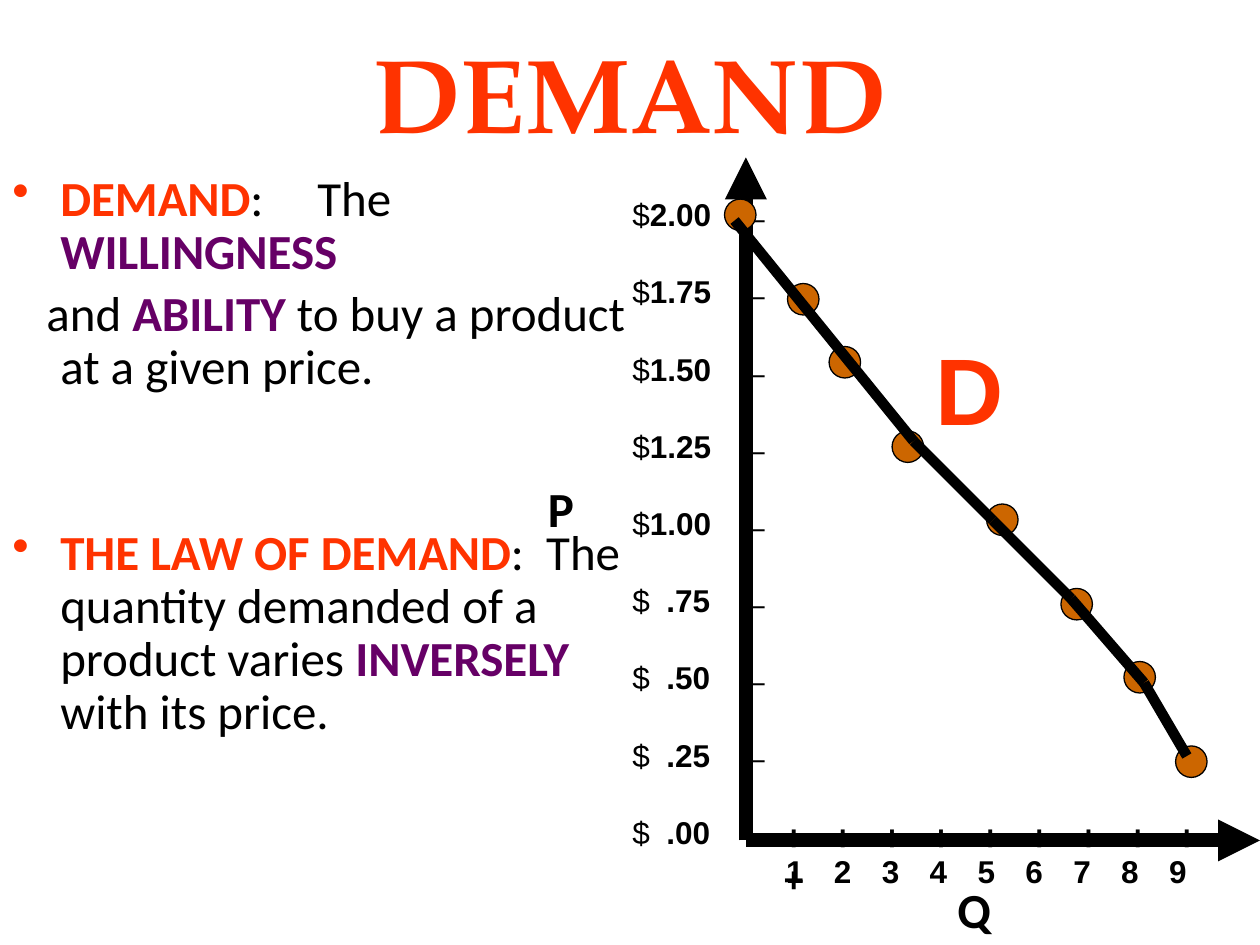
from itertools import pairwise

from lxml import etree
from pptx import Presentation
from pptx.dml.color import RGBColor
from pptx.enum.shapes import MSO_CONNECTOR as CONN, MSO_SHAPE as SHAPE
from pptx.enum.text import MSO_ANCHOR as ANCHOR, MSO_AUTO_SIZE as AUTO, PP_ALIGN as ALIGN
from pptx.oxml.ns import qn
from pptx.util import Inches, Pt

RED = RGBColor(0xFF, 0x33, 0x00)
PURPLE = RGBColor(0x66, 0x00, 0x66)
BLACK = RGBColor(0, 0, 0)
OCHRE = RGBColor(0xCC, 0x66, 0x00)

PRICES = ["2.00", "1.75", "1.50", "1.25", "1.00", ".75", ".50", ".25", ".00"]
LABEL_GAP = 22.5
DOT_SIZE = 0.25
# Offsets in inches from the top left corner of the graph
DOTS = [(1.5, 0.33), (2, 1), (2.33, 1.5), (2.83, 2.17),
        (3.58, 2.75), (4.17, 3.42), (4.67, 4), (5.08, 4.67)]
CURVE = [(1.58, 0.5), (3, 2.25), (3.63, 2.88), (4.25, 3.5), (4.83, 4.17), (5.17, 4.75)]


def add_run(p, text, size, font, color=BLACK, bold=False):
    r = p.add_run()
    r.text = text
    r.font.size, r.font.name, r.font.bold = Pt(size), font, bold
    r.font.color.rgb = color


def add_text_frame(slide, left, top, width, height):
    tf = slide.shapes.add_textbox(
        Inches(left), Inches(top), Inches(width), Inches(height)).text_frame
    tf.word_wrap = True
    return tf


def next_paragraph(tf, gap=0):
    """Return the empty first paragraph, or a new one with the gap above it."""
    if not tf.paragraphs[0].runs:
        return tf.paragraphs[0]
    p = tf.add_paragraph()
    p.space_before = Pt(gap)
    return p


def add_tabs(p, stops):
    tabs = etree.SubElement(p._p.get_or_add_pPr(), qn("a:tabLst"))
    for stop in stops:
        etree.SubElement(tabs, qn("a:tab"), pos=str(Inches(stop)), algn="l")


def add_bullet(p, color):
    pPr = p._p.get_or_add_pPr()
    clr = etree.SubElement(pPr, qn("a:buClr"))
    etree.SubElement(clr, qn("a:srgbClr"), val=str(color))
    etree.SubElement(pPr, qn("a:buChar"), char="•")


def add_line(slide, start, end, width, arrow=False):
    ends = [Inches(v) for v in (*start, *end)]
    line = slide.shapes.add_connector(CONN.STRAIGHT, *ends)
    line.line.color.rgb = BLACK
    line.line.width = Pt(width)
    if arrow:
        etree.SubElement(line.line._get_or_add_ln(), qn("a:tailEnd"), type="triangle")
    etree.SubElement(line._element.spPr, qn("a:effectLst"))


def add_title(slide, left, top, width, height):
    sp = slide.shapes.title
    sp.left, sp.top = Inches(left), Inches(top)
    sp.width, sp.height = Inches(width), Inches(height)
    tf = sp.text_frame
    tf.auto_size, tf.vertical_anchor = AUTO.NONE, ANCHOR.MIDDLE
    p = tf.paragraphs[0]
    p.alignment, p.line_spacing = ALIGN.CENTER, Pt(57)
    add_run(p, "DEMAND", 60, "TeX Gyre Pagella", RED, True)


def add_definitions(slide, left, top, width, height):
    tf = add_text_frame(slide, left, top, width, height)
    # Each paragraph: gap above, first-line indent, bulleted, tab stops, runs
    paragraphs = [
        (0, -0.38, True, [2.42],
         [("DEMAND", RED), (":\tThe ", BLACK), ("WILLINGNESS", PURPLE)]),
        (5.6, -0.11, False, [],
         [("and ", BLACK), ("ABILITY", PURPLE),
          (" to buy a product at a given price.", BLACK)]),
        (76, -0.38, True, [],
         [("THE LAW OF DEMAND", RED),
          (":  The quantity demanded of a product varies ", BLACK),
          ("INVERSELY", PURPLE), (" with its price.", BLACK)]),
    ]
    for gap, indent, bulleted, stops, runs in paragraphs:
        p = next_paragraph(tf, gap)
        p.line_spacing = 0.9
        pPr = p._p.get_or_add_pPr()
        pPr.set("marL", str(Inches(0.38)))
        pPr.set("indent", str(Inches(indent)))
        if bulleted:
            add_bullet(p, RED)
        if stops:
            add_tabs(p, stops)
        for text, color in runs:
            add_run(p, text, 28, "Calibri", color, color != BLACK)


def add_price_scale(slide, left, top):
    labels = add_text_frame(slide, left, top, 0.83, 5.21)
    ticks = add_text_frame(slide, left + 0.91, top - 0.08, 0.42, 5.21)
    for price in PRICES:
        p = next_paragraph(labels, LABEL_GAP)
        if price.startswith("."):
            add_tabs(p, [0.27])
            add_run(p, "$\t", 18, "Arial")
        else:
            add_run(p, "$", 18, "Arial")
        add_run(p, price, 18, "Arial", bold=True)
        add_run(next_paragraph(ticks, LABEL_GAP), "_", 18, "Arial")


def add_quantity_scale(slide, left, top):
    ticks = add_text_frame(slide, left, top, 3.88, 0.43)
    p = ticks.paragraphs[0]
    add_tabs(p, [round(0.39 * i, 2) for i in range(1, 9)])
    add_run(p, "\t".join("+" * 9), 20, "Arial", bold=True)
    add_run(next_paragraph(ticks), "+", 20, "Arial", bold=True)

    p = add_text_frame(slide, left + 0.02, top + 0.29, 3.67, 0.4).paragraphs[0]
    add_tabs(p, [round(0.38 * i, 2) for i in range(1, 9)])
    add_run(p, "\t".join("123456789"), 18, "Arial", bold=True)


def add_demand_graph(slide, left, top, width, height):
    def at(x, y):
        return left + x, top + y

    origin = at(1.67, height)
    add_line(slide, origin, at(width, height), 8, arrow=True)
    add_line(slide, origin, at(1.67, 0), 8, arrow=True)

    for text, x, y, w, h, size, font, color in [
        ("D", 3.08, 1.33, 0.74, 1, 54, "Arial", RED),
        ("P", 0, 2.5, 0.46, 0.57, 28, "Calibri", BLACK),
        ("Q", 3.25, 5.68, 0.92, 0.57, 28, "Calibri", BLACK),
    ]:
        tf = add_text_frame(slide, *at(x, y), w, h)
        add_run(tf.paragraphs[0], text, size, font, color, True)

    add_price_scale(slide, *at(0.67, 0.25))
    add_quantity_scale(slide, *at(1.87, 5.17))

    for dot in DOTS:
        x, y = at(*dot)
        sp = slide.shapes.add_shape(
            SHAPE.OVAL, Inches(x), Inches(y), Inches(DOT_SIZE), Inches(DOT_SIZE))
        sp.shadow.inherit = False
        sp.fill.solid()
        sp.fill.fore_color.rgb = OCHRE
        sp.line.color.rgb = BLACK
        sp.line.width = Pt(0.75)
    for start, end in pairwise(CURVE):
        add_line(slide, at(*start), at(*end), 6)


def main():
    prs = Presentation()
    prs.slide_width, prs.slide_height = Inches(10), Inches(7.5)
    slide = prs.slides.add_slide(prs.slide_layouts[5])
    add_title(slide, 0.75, 0.08, 8.5, 1.5)
    add_definitions(slide, 0, 1.33, 5.08, 6.17)
    add_demand_graph(slide, 4.25, 1.25, 5.75, 5.42)
    prs.save("out.pptx")


if __name__ == "__main__":
    main()
